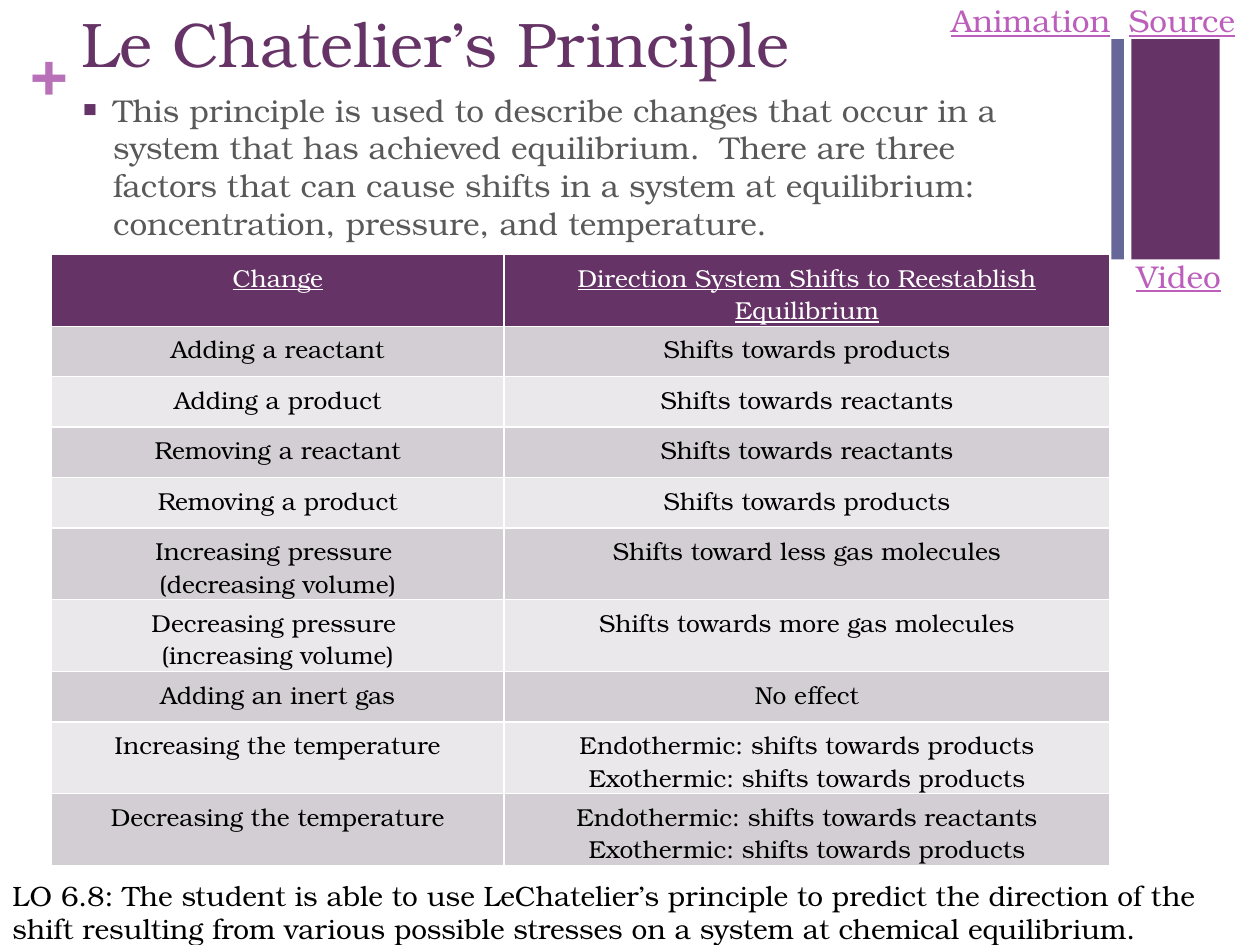
from lxml import etree
from pptx import Presentation
from pptx.dml.color import RGBColor
from pptx.enum.shapes import MSO_SHAPE
from pptx.enum.text import PP_ALIGN
from pptx.oxml.ns import qn
from pptx.util import Inches, Pt

RECT = MSO_SHAPE.RECTANGLE
CENTER = PP_ALIGN.CENTER
FONT = "TeX Gyre Bonum"
PURPLE, BLUE, ORCHID, LINK = "663366", "666699", "B870B8", "BC5FBC"
WHITE, BLACK, GREY = "FFFFFF", "000000", "595959"
BANDS = ("D3CED3", "EAE8EA")
ROW_HEIGHT, TALL_ROW_HEIGHT = 0.4, 0.57

# Each cell is a list of paragraphs
ROWS = [
    (["Change"], ["Direction System Shifts to Reestablish Equilibrium"]),
    (["Adding a reactant"], ["Shifts towards products"]),
    (["Adding a product"], ["Shifts towards reactants"]),
    (["Removing a reactant"], ["Shifts towards reactants"]),
    (["Removing a product"], ["Shifts towards products"]),
    (["Increasing pressure \n(decreasing volume)"], ["Shifts toward less gas molecules"]),
    (["Decreasing pressure \n(increasing volume)"], ["Shifts towards more gas molecules"]),
    (["Adding an inert gas"], ["No effect"]),
    (["Increasing the temperature"],
     ["Endothermic: shifts towards products", "Exothermic: shifts towards products"]),
    (["Decreasing the temperature"],
     ["Endothermic: shifts towards reactants", "Exothermic: shifts towards products"]),
]
TALL_ROWS = (0, 5, 6, 8, 9)


def rgb(color):
    return RGBColor.from_string(color)


def add_run(p, text, size, color, bold=False, underline=False):
    for i, line in enumerate(text.split("\n")):
        if i:
            p.add_line_break()
        r = p.add_run()
        r.text = line
        r.font.name = FONT
        r.font.size = Pt(size)
        r.font.color.rgb = rgb(color)
        r.font.bold = bold
        r.font.underline = underline


def add_bar(s, x, y, w, h, color):
    sp = s.shapes.add_shape(RECT, Inches(x), Inches(y), Inches(w), Inches(h))
    sp.shadow.inherit = False
    sp.fill.solid()
    sp.fill.fore_color.rgb = rgb(color)
    sp.line.fill.background()


def add_text(s, x, y, w, h, text, size, color, inset=True, **style):
    sp = s.shapes.add_textbox(Inches(x), Inches(y), Inches(w), Inches(h))
    tf = sp.text_frame
    tf.word_wrap = True
    if not inset:
        tf.margin_left = tf.margin_right = tf.margin_top = tf.margin_bottom = 0
    p = tf.paragraphs[0]
    add_run(p, text, size, color, **style)
    return p


def add_bullet(p, char, color, percent, indent):
    pPr = p._p.get_or_add_pPr()
    pPr.set("marL", str(Inches(indent)))
    pPr.set("indent", str(-Inches(indent)))
    clr = etree.SubElement(pPr, qn("a:buClr"))
    etree.SubElement(clr, qn("a:srgbClr"), val=color)
    etree.SubElement(pPr, qn("a:buSzPct"), val=str(percent * 1000))
    etree.SubElement(pPr, qn("a:buFont"), typeface=FONT)
    etree.SubElement(pPr, qn("a:buChar"), char=char)


def set_borders(cell, color, width):
    tcPr = cell._tc.get_or_add_tcPr()
    for i, tag in enumerate(("a:lnL", "a:lnR", "a:lnT", "a:lnB")):
        ln = etree.Element(qn(tag), w=str(Pt(width)))
        fill = etree.SubElement(ln, qn("a:solidFill"))
        etree.SubElement(fill, qn("a:srgbClr"), val=color)
        tcPr.insert(i, ln)


def fill_cell(cell, lines, header, band):
    cell.fill.solid()
    cell.fill.fore_color.rgb = rgb(PURPLE if header else band)
    cell.margin_bottom = 0
    set_borders(cell, WHITE, 1)
    tf = cell.text_frame
    for i, line in enumerate(lines):
        p = tf.add_paragraph() if i else tf.paragraphs[0]
        p.alignment = CENTER
        add_run(p, line, 14, WHITE if header else BLACK, underline=header)


def add_shift_table(s, x, y, col_widths):
    heights = [TALL_ROW_HEIGHT if i in TALL_ROWS else ROW_HEIGHT for i in range(len(ROWS))]
    table = s.shapes.add_table(len(ROWS), len(col_widths), Inches(x), Inches(y),
                               Inches(sum(col_widths)), Inches(sum(heights))).table
    for col, width in zip(table.columns, col_widths):
        col.width = Inches(width)
    for i, (row, height) in enumerate(zip(ROWS, heights)):
        table.rows[i].height = Inches(height)
        for j, lines in enumerate(row):
            fill_cell(table.cell(i, j), lines, i == 0, BANDS[(i - 1) % 2])


def main():
    prs = Presentation()
    prs.slide_width, prs.slide_height = Inches(10), Inches(7.5)
    s = prs.slides.add_slide(prs.slide_layouts[6])

    # Side bars and plus sign
    add_bar(s, 8.98, 0.31, 0.7, 1.75, PURPLE)
    add_bar(s, 8.82, 0.31, 0.1, 1.75, BLUE)
    add_text(s, 0.24, 0.25, 0.29, 0.61, "+", 36, ORCHID, inset=False, bold=True)

    # Title and learning objective
    add_text(s, 0.55, -0.01, 8.26, 1.22, "Le Chatelier’s Principle", 36, PURPLE)
    add_text(s, 0, 6.92, 10, 0.64,
             "LO 6.8: The student is able to use LeChatelier’s principle to predict the "
             "direction of the shift resulting from various possible stresses on a system "
             "at chemical equilibrium.", 16, BLACK)

    # Link labels
    for x, y, w, label in ((8.86, -0.04, 1.07, "Source"), (8.92, 1.99, 0.98, "Video"),
                           (7.45, -0.04, 1.5, "Animation")):
        add_text(s, x, y, w, 0.4, label, 18, LINK, underline=True)

    # Introduction
    intro = add_text(s, 0.55, 0.67, 7.6, 5.53,
                     "This principle is used to describe changes that occur in a system that "
                     "has achieved equilibrium.  There are three factors that can cause shifts "
                     "in a system at equilibrium: concentration, pressure, and temperature.",
                     18, GREY)
    add_bullet(intro, "■", PURPLE, 75, 0.25)

    # Table of changes and shifts
    add_shift_table(s, 0.41, 2.02, (3.59, 4.81))

    prs.save("out.pptx")


if __name__ == "__main__":
    main()
